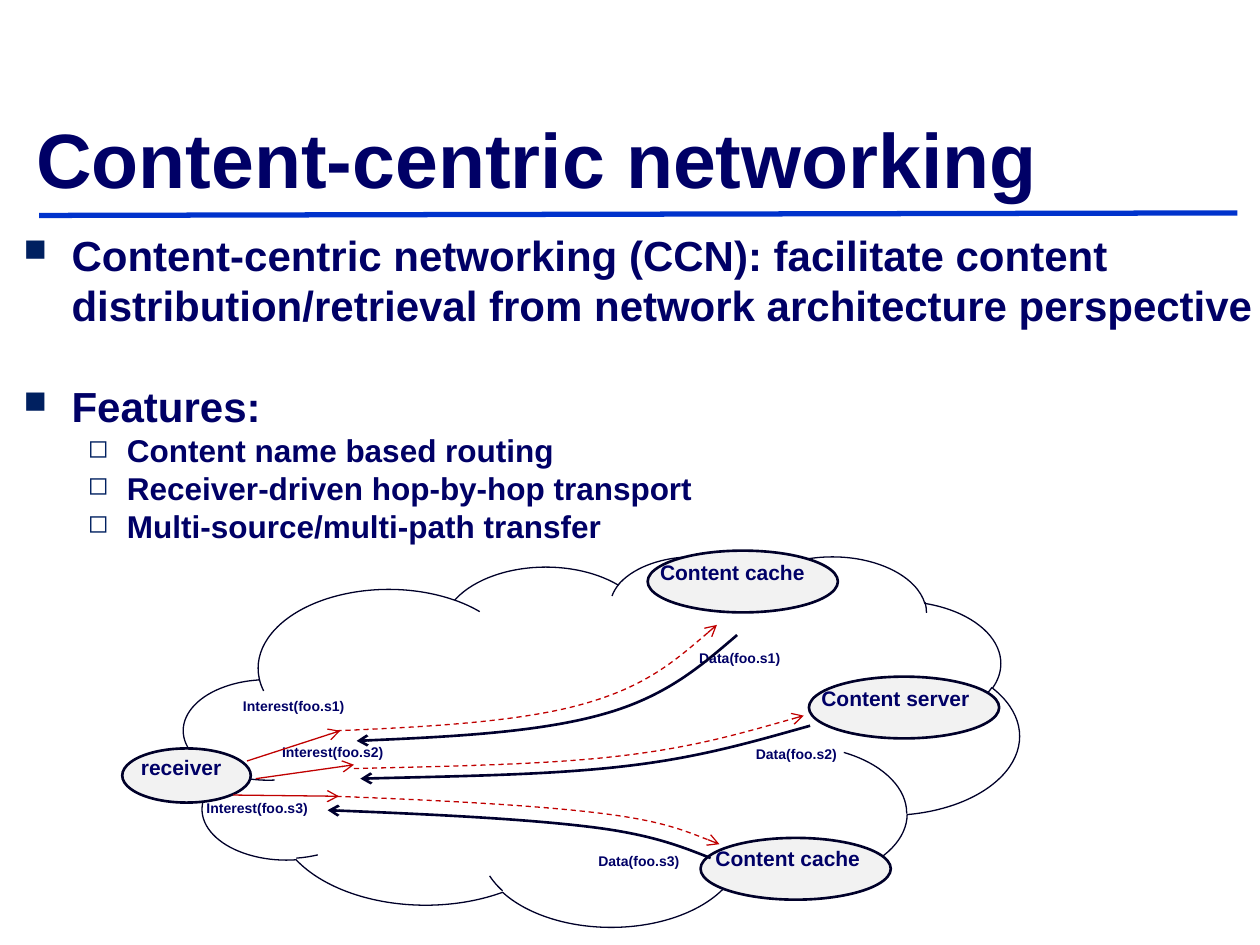
from lxml.etree import SubElement
from pptx import Presentation
from pptx.dml.color import RGBColor
from pptx.enum.dml import MSO_LINE
from pptx.enum.shapes import MSO_CONNECTOR, MSO_SHAPE
from pptx.enum.text import MSO_ANCHOR
from pptx.oxml.ns import qn
from pptx.util import Inches, Pt

TEXT, OUTLINE, DATA, INTEREST = "000066", "000029", "00002E", "C00000"
LEVELS = [
    {"size": 24, "indent": 0.62, "hanging": 0.38, "bullet": "■", "scale": 75},
    {"size": 18, "indent": 1.06, "hanging": 0.31, "bullet": "◻", "scale": 80},
]
BODY = [
    (0, "Content-centric networking (CCN): facilitate content "
        "distribution/retrieval from network architecture perspective", 0),
    (0, "Features:", 29),
    (1, "Content name based routing", 0),
    (1, "Receiver-driven hop-by-hop transport", 0),
    (1, "Multi-source/multi-path transfer", 0),
]
NODES = [
    (0.97, 5.94, 1.02, 0.43),
    (6.42, 5.37, 1.51, 0.49),
    (5.56, 6.65, 1.51, 0.49),
    (5.14, 4.37, 1.51, 0.49),
]
NODE_LABELS = [
    ("receiver", 1.02, 5.94, 0.94),
    ("Content server", 6.42, 5.39, 1.61),
    ("Content cache", 5.14, 4.39, 1.51),
    ("Content cache", 5.58, 6.66, 1.51),
]
MESSAGE_LABELS = [
    ("Interest(foo.s1)", 1.83, 5.49, 1.13),
    ("Interest(foo.s2)", 2.14, 5.85, 1.13),
    ("Interest(foo.s3)", 1.54, 6.3, 1.13),
    ("Data(foo.s1)", 5.45, 5.11, 0.95),
    ("Data(foo.s2)", 5.9, 5.87, 0.95),
    ("Data(foo.s3)", 4.65, 6.72, 0.95),
]
REQUESTS = [
    ((1.96, 6.04), (2.7, 5.8)),
    ((2.03, 6.18), (2.81, 6.07)),
    ((1.85, 6.31), (2.69, 6.32)),
]
ROUTES = [
    [(2.67, 5.8), (3.39, 5.77), (4.12, 5.73), (4.62, 5.59),
     (5.13, 5.45), (5.41, 5.2), (5.69, 4.96)],
    [(2.81, 6.1), (3.57, 6.08), (4.33, 6.07), (4.92, 6),
     (5.52, 5.93), (5.95, 5.8), (6.38, 5.68)],
    [(2.67, 6.32), (3.45, 6.35), (4.23, 6.39), (4.73, 6.45),
     (5.24, 6.51), (5.48, 6.61), (5.71, 6.7)],
]
RETURN_OFFSETS = [(0.16, 0.08), (0.05, 0.08), (-0.07, 0.11)]


def color(value):
    """Turn a hex string into a colour."""
    return RGBColor.from_string(value)


def style_line(shape, stroke, width, head=None, dash=None):
    """Set the stroke of a shape, with an optional arrowhead and dash."""
    shape.line.color.rgb = color(stroke)
    shape.line.width = Pt(width)
    if dash:
        shape.line.dash_style = dash
    if head:
        SubElement(shape.line._get_or_add_ln(), qn(f"a:{head}"), type="arrow")


def style_font(paragraph, size):
    """Give a paragraph the font of the slide."""
    values = {"name": "Arial", "size": Pt(size), "bold": True}
    for name, value in values.items():
        setattr(paragraph.font, name, value)
    paragraph.font.color.rgb = color(TEXT)


def add_text(slide, text, bounds, size, anchor=MSO_ANCHOR.TOP):
    """Add a wrapped text box with one paragraph."""
    box = slide.shapes.add_textbox(*map(Inches, bounds))
    frame = box.text_frame
    frame.word_wrap = True
    frame.vertical_anchor = anchor
    frame.text = text
    style_font(frame.paragraphs[0], size)
    return frame


def add_bullet(paragraph, level):
    """Set the indents and the bullet of a paragraph."""
    properties = paragraph._p.get_or_add_pPr()
    properties.set("marL", str(Inches(level["indent"])))
    properties.set("indent", str(-Inches(level["hanging"])))
    bullet_color = SubElement(properties, qn("a:buClr"))
    SubElement(bullet_color, qn("a:srgbClr"), val="002060")
    SubElement(properties, qn("a:buSzPct"), val=str(level["scale"] * 1000))
    SubElement(properties, qn("a:buChar"), char=level["bullet"])


def add_body(slide):
    """Add the bulleted list."""
    frame = add_text(slide, "", (-0.15, 1.77, 10.63, 2.88), 24)
    for index, (depth, text, gap) in enumerate(BODY):
        paragraph = frame.add_paragraph() if index else frame.paragraphs[0]
        paragraph.text = text
        paragraph.level = depth
        if gap:
            paragraph.space_before = Pt(gap)
        add_bullet(paragraph, LEVELS[depth])
        style_font(paragraph, LEVELS[depth]["size"])


def add_outline(slide, kind, bounds, width, fill=None):
    """Add a preset shape, hollow unless a fill is given."""
    shape = slide.shapes.add_shape(kind, *map(Inches, bounds))
    shape.shadow.inherit = False
    if fill:
        shape.fill.solid()
        shape.fill.fore_color.rgb = color(fill)
    else:
        shape.fill.background()
    style_line(shape, OUTLINE, width)


def add_line(slide, start, end, stroke, width, head=None):
    """Add a straight connector."""
    line = slide.shapes.add_connector(
        MSO_CONNECTOR.STRAIGHT, *map(Inches, (*start, *end)))
    style_line(line, stroke, width, head)
    SubElement(line._element.spPr, qn("a:effectLst"))


def bend(shape):
    """Join each three line segments of a freeform into one cubic curve."""
    segments = list(shape._element.iter(qn("a:lnTo")))
    for first in range(0, len(segments), 3):
        outline = segments[first].getparent()
        curve = SubElement(outline, qn("a:cubicBezTo"))
        for segment in segments[first:first + 3]:
            curve.append(segment[0])
            outline.remove(segment)


def add_curve(slide, controls, stroke, width, head, dash=None):
    """Add an open curve with an arrowhead."""
    points = [(Inches(x), Inches(y)) for x, y in controls]
    builder = slide.shapes.build_freeform(*points[0])
    builder.add_line_segments(points[1:], close=False)
    shape = builder.convert_to_shape()
    bend(shape)
    shape.shadow.inherit = False
    shape.fill.background()
    style_line(shape, stroke, width, head, dash)


def add_network(slide):
    """Draw the cloud, its nodes and the messages between them."""
    add_outline(slide, MSO_SHAPE.CLOUD, (1.46, 4.41, 6.63, 2.94), 0.75)
    for bounds in NODES:
        add_outline(slide, MSO_SHAPE.OVAL, bounds, 1.5, "F2F2F2")
    for labels, height, size in ((NODE_LABELS, 0.43, 12), (MESSAGE_LABELS, 0.33, 8)):
        for text, left, top, width in labels:
            add_text(slide, text, (left, top, width, height), size)
    for start, end in REQUESTS:
        add_line(slide, start, end, INTEREST, 0.75, "tailEnd")
    for route in ROUTES:
        add_curve(slide, route, INTEREST, 0.75, "tailEnd", MSO_LINE.DASH)
    for route, (right, down) in zip(ROUTES, RETURN_OFFSETS):
        shifted = [(x + right, y + down) for x, y in route]
        add_curve(slide, shifted, DATA, 1.5, "headEnd")


def main():
    """Build and save the slide."""
    presentation = Presentation()
    presentation.slide_width = Inches(10)
    presentation.slide_height = Inches(7.5)
    slide = presentation.slides.add_slide(presentation.slide_layouts[6])
    add_text(slide, "Content-centric networking", (0.19, 0.5, 9, 1.5), 44,
             MSO_ANCHOR.MIDDLE)
    add_body(slide)
    add_network(slide)
    add_line(slide, (0.31, 1.71), (9.82, 1.69), "0033CC", 3)
    presentation.save("out.pptx")


if __name__ == "__main__":
    main()
